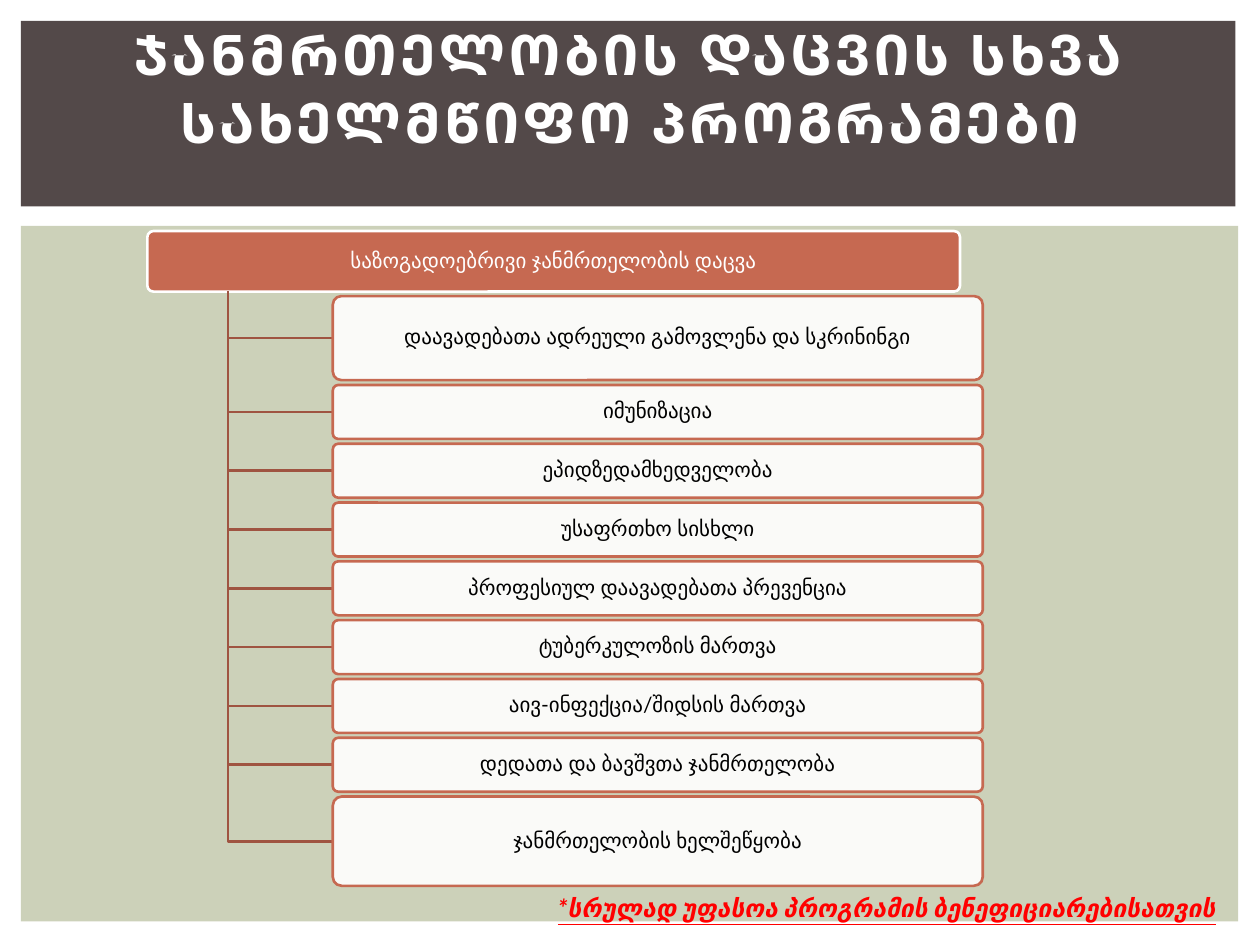
from lxml import etree
from pptx import Presentation
from pptx.dml.color import RGBColor
from pptx.enum.shapes import MSO_SHAPE
from pptx.enum.text import MSO_ANCHOR, PP_ALIGN
from pptx.oxml.ns import qn
from pptx.util import Pt

TITLE = "ᲯᲐᲜᲛᲠᲗᲔᲚᲝᲑᲘᲡ ᲓᲐᲪᲕᲘᲡ ᲡᲮᲕᲐ ᲡᲐᲮᲔᲚᲛᲬᲘᲤᲝ ᲞᲠᲝᲒᲠᲐᲛᲔᲑᲘ"
HEADING = "საზოგადოებრივი ჯანმრთელობის დაცვა"
ROW, FIRST_ROW, LAST_ROW = 30.8, 48, 51
PROGRAMS = [  # name, box height
    ("დაავადებათა ადრეული გამოვლენა და სკრინინგი", FIRST_ROW),
    ("იმუნიზაცია", ROW),
    ("ეპიდზედამხედველობა", ROW),
    ("უსაფრთხო სისხლი", ROW),
    ("პროფესიულ დაავადებათა პრევენცია", ROW),
    ("ტუბერკულოზის მართვა", ROW),
    ("აივ-ინფექცია/შიდსის მართვა", ROW),
    ("დედათა და ბავშვთა ჯანმრთელობა", ROW),
    ("ჯანმრთელობის ხელშეწყობა", LAST_ROW),
]
FOOTNOTE = "*სრულად უფასოა პროგრამის ბენეფიციარებისათვის"

FONT = "Lato"
WHITE = RGBColor(0xFF, 0xFF, 0xFF)
BLACK = RGBColor(0, 0, 0)
RED = RGBColor(0xFF, 0, 0)
SAGE = RGBColor(0xCC, 0xD1, 0xB9)
BROWN = RGBColor(0x53, 0x49, 0x49)
TERRACOTTA = RGBColor(0xC6, 0x69, 0x51)
RUST = RGBColor(0x9F, 0x54, 0x41)
RECTANGLE, ROUNDED = MSO_SHAPE.RECTANGLE, MSO_SHAPE.ROUNDED_RECTANGLE
TOP, MIDDLE = MSO_ANCHOR.TOP, MSO_ANCHOR.MIDDLE
CENTER, RIGHT = PP_ALIGN.CENTER, PP_ALIGN.RIGHT

TRUNK_X, TRUNK_TOP = 130.4, 166.6
ROW_LEFT, ROW_TOP, ROW_WIDTH, ROW_GAP = 190.2, 169.2, 371.4, 2.8
LINE_WIDTH = 1.5


def add_box(page, kind, area, fill, line=None):
    box = page.shapes.add_shape(kind, *map(Pt, area))
    box.shadow.inherit = False
    box.fill.solid()
    box.fill.fore_color.rgb = fill
    if line is None:
        box.line.fill.background()
    else:
        box.line.color.rgb = line
        box.line.width = Pt(LINE_WIDTH)
    return box


def write(box, text, size, color, align=CENTER, anchor=MIDDLE, insets=(7.2, 3.6, 7.2, 3.6)):
    """Fill the box with one formatted paragraph and return its run."""
    frame = box.text_frame
    frame.word_wrap = True
    frame.vertical_anchor = anchor
    (frame.margin_left, frame.margin_top,
     frame.margin_right, frame.margin_bottom) = map(Pt, insets)
    frame.text = text
    para = frame.paragraphs[0]
    para.alignment = align
    span = para.runs[0]
    span.font.name = FONT
    span.font.size = Pt(size)
    span.font.color.rgb = color
    return span


def add_node(page, area, text, fill, line, color):
    node = add_box(page, ROUNDED, area, fill, line)
    node.adjustments[0] = 0.1
    write(node, text, 12, color, insets=(3.2, 2.4, 3.2, 2.4))
    node.text_frame.paragraphs[0].line_spacing = 0.9
    return node


def add_branch(page, y):
    """Draw the elbow from the heading down to y and across to the row."""
    builder = page.shapes.build_freeform(Pt(TRUNK_X), Pt(TRUNK_TOP))
    builder.add_line_segments(
        [(Pt(TRUNK_X), Pt(y)), (Pt(ROW_LEFT), Pt(y))], close=False)
    branch = builder.convert_to_shape()
    branch.shadow.inherit = False
    branch.fill.background()
    branch.line.color.rgb = RUST
    branch.line.width = Pt(LINE_WIDTH)


def set_opacity(shape, percent):
    color = shape.fill._xPr.find(qn("a:solidFill"))[0]
    etree.SubElement(color, qn("a:alpha"), val=str(percent * 1000))


def main():
    deck = Presentation()
    deck.slide_width, deck.slide_height = Pt(720), Pt(540)
    page = deck.slides.add_slide(deck.slide_layouts[6])

    add_box(page, RECTANGLE, (12, 129, 695.5, 397.5), SAGE)
    add_box(page, RECTANGLE, (12, 12, 694, 106), BROWN)
    add_node(page, (84.2, 132, 464.4, 34.6), HEADING, TERRACOTTA, WHITE, WHITE)

    top = ROW_TOP
    for name, height in PROGRAMS:
        add_branch(page, top + height / 2)
        row = add_node(page, (ROW_LEFT, top, ROW_WIDTH, height),
                       name, WHITE, TERRACOTTA, BLACK)
        set_opacity(row, 90)
        top += height + ROW_GAP

    title = page.shapes.add_textbox(Pt(30), Pt(28), Pt(660), Pt(83))
    span = write(title, TITLE, 32, WHITE, insets=(7.2, 3.6, 7.2, 43))
    span.font.bold = True
    span.font._element.set("spc", "200")

    footnote = page.shapes.add_textbox(Pt(30), Pt(507), Pt(672), Pt(24.2))
    span = write(footnote, FOOTNOTE, 14, RED, RIGHT, TOP)
    span.font.bold = span.font.italic = span.font.underline = True

    deck.save("out.pptx")


if __name__ == "__main__":
    main()
